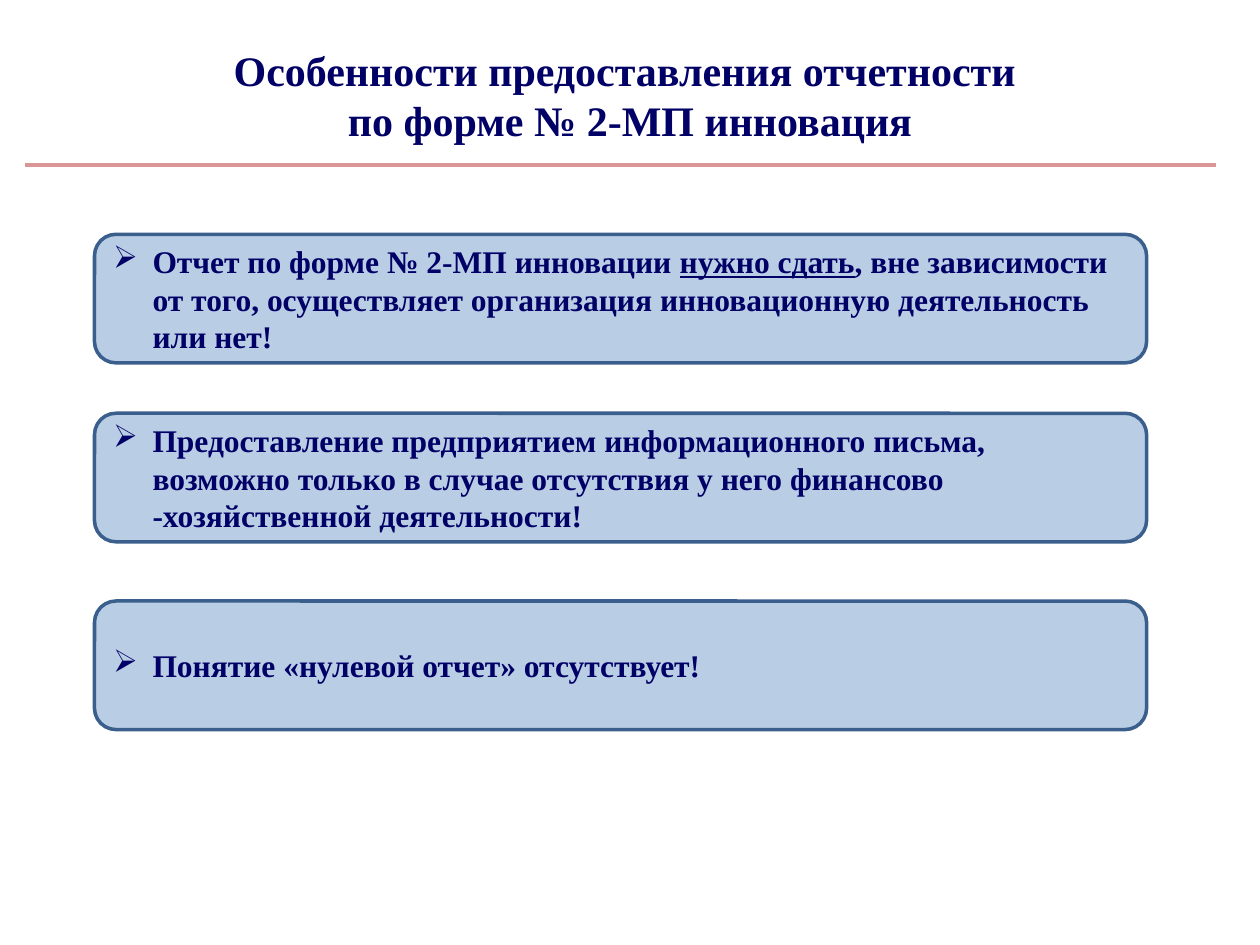
from dataclasses import dataclass

from lxml import etree
from pptx import Presentation
from pptx.dml.color import RGBColor
from pptx.enum.shapes import MSO_CONNECTOR, MSO_SHAPE
from pptx.enum.text import MSO_ANCHOR, PP_ALIGN
from pptx.oxml.ns import qn
from pptx.util import Pt

ROUNDED = MSO_SHAPE.ROUNDED_RECTANGLE
STRAIGHT = MSO_CONNECTOR.STRAIGHT
TOP, MIDDLE = MSO_ANCHOR.TOP, MSO_ANCHOR.MIDDLE
LEFT, CENTER = PP_ALIGN.LEFT, PP_ALIGN.CENTER

NAVY, PALE_BLUE, STEEL, ROSE = "000066", "B9CDE5", "3A5F8C", "D99694"
CARD_LEFT, CARD_WIDTH, CARD_HEIGHT = 54, 601.2, 73.44
BULLET_INDENT = 22.5
LETTERING = {"name": "Times New Roman", "bold": True}


@dataclass
class Phrase:
    text: str
    underline: bool = False


@dataclass
class Rule:
    top: float
    phrases: list[Phrase]


RULES = [
    Rule(133.92, [
        Phrase("Отчет по форме № 2-МП инновации "),
        Phrase("нужно сдать", True),
        Phrase(", вне зависимости от того, осуществляет организация "
               "инновационную деятельность или нет!"),
    ]),
    Rule(236.16, [
        Phrase("Предоставление предприятием информационного письма, возможно "
               "только в случае отсутствия у него финансово "
               "-хозяйственной деятельности!"),
    ]),
    Rule(343.44, [Phrase("Понятие «нулевой отчет» отсутствует!")]),
]


def color(value: str) -> RGBColor:
    return RGBColor.from_string(value)


def style_font(font, size: float, underline: bool = False) -> None:
    for attribute, value in {**LETTERING, "size": Pt(size), "underline": underline}.items():
        setattr(font, attribute, value)
    font.color.rgb = color(NAVY)


def add_bullet(paragraph) -> None:
    properties = paragraph._p.get_or_add_pPr()
    properties.set("marL", str(Pt(BULLET_INDENT)))
    properties.set("indent", str(-Pt(BULLET_INDENT)))
    etree.SubElement(properties, qn("a:buChar")).set("char", "➢")


def add_heading(slide, text: str) -> None:
    heading = slide.shapes.add_textbox(Pt(0), Pt(21.6), Pt(720), Pt(90))
    frame = heading.text_frame
    frame.word_wrap = True
    frame.vertical_anchor = TOP
    paragraph = frame.paragraphs[0]
    paragraph.text = text
    paragraph.alignment = CENTER
    for run in paragraph.runs:
        style_font(run.font, 24)


def add_rule_card(slide, rule: Rule) -> None:
    card = slide.shapes.add_shape(
        ROUNDED, Pt(CARD_LEFT), Pt(rule.top), Pt(CARD_WIDTH), Pt(CARD_HEIGHT))
    card.shadow.inherit = False
    card.fill.solid()
    card.fill.fore_color.rgb = color(PALE_BLUE)
    card.line.color.rgb = color(STEEL)
    card.line.width = Pt(2)
    frame = card.text_frame
    frame.word_wrap = True
    frame.vertical_anchor = MIDDLE
    paragraph = frame.paragraphs[0]
    paragraph.alignment = LEFT
    add_bullet(paragraph)
    for phrase in rule.phrases:
        run = paragraph.add_run()
        run.text = phrase.text
        style_font(run.font, 18, phrase.underline)


def add_divider(slide) -> None:
    divider = slide.shapes.add_connector(
        STRAIGHT, Pt(14.4), Pt(94.32), Pt(694.8), Pt(94.32))
    divider.line.color.rgb = color(ROSE)
    divider.line.width = Pt(2.25)
    etree.SubElement(divider._element.spPr, qn("a:effectLst"))


def main() -> None:
    deck = Presentation()
    deck.slide_width, deck.slide_height = Pt(720), Pt(540)
    slide = deck.slides.add_slide(deck.slide_layouts[6])
    add_heading(slide, "Особенности предоставления отчетности \vпо форме № 2-МП инновация")
    for rule in RULES:
        add_rule_card(slide, rule)
    add_divider(slide)
    deck.save("out.pptx")


if __name__ == "__main__":
    main()
